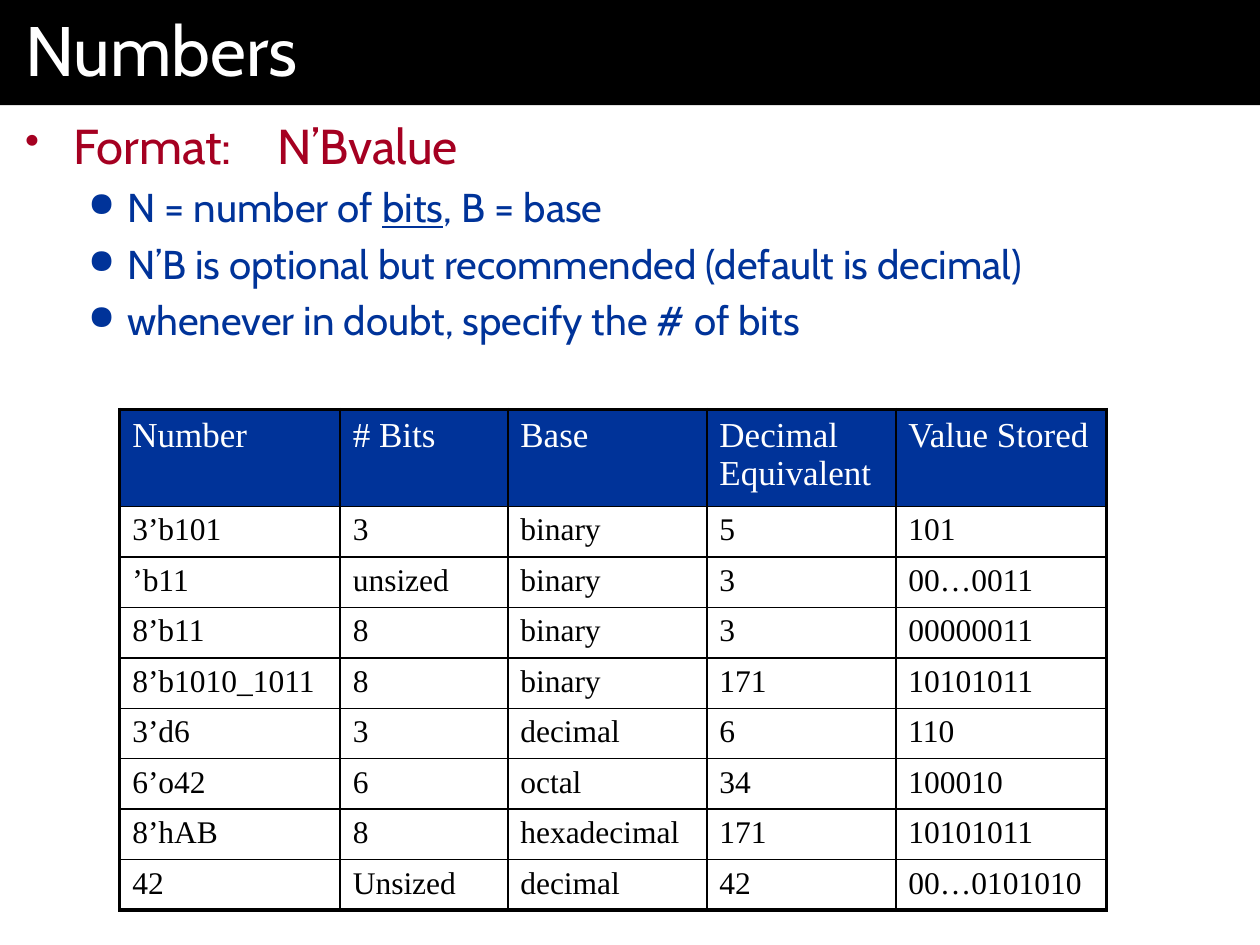
from lxml.etree import SubElement
from pptx import Presentation
from pptx.dml.color import RGBColor
from pptx.enum.text import MSO_ANCHOR, MSO_AUTO_SIZE, PP_ALIGN
from pptx.oxml import parse_xml
from pptx.oxml.ns import nsdecls, qn
from pptx.util import Inches, Pt

BLACK, WHITE, BLUE, RED = "000000", "FFFFFF", "003399", "A50021"


def color(value):
    return RGBColor.from_string(value)


def write(paragraph, text, font="Cabin", size=18, fill=BLACK, space=None,
          bullet=None, indent=(0, 0), level=0, underlined=None):
    """Fill a paragraph; space is the percentage of a line set before it."""
    paragraph.alignment = PP_ALIGN.LEFT
    paragraph.level = level
    properties = paragraph._p.get_or_add_pPr()
    if space:
        before = SubElement(properties, qn("a:spcBef"))
        SubElement(before, qn("a:spcPct"), val=str(space * 1000))
    if bullet:
        left, first = indent
        properties.set("marL", str(Inches(left)))
        properties.set("indent", str(Inches(first)))
        bullet_color = SubElement(properties, qn("a:buClr"))
        SubElement(bullet_color, qn("a:srgbClr"), val=fill)
        SubElement(properties, qn("a:buSzPct"), val="85000")
        SubElement(properties, qn("a:buChar"), char=bullet)
    # An underlined word splits the text into three runs
    before, word, after = text.partition(underlined) if underlined else (text, "", "")
    for part in filter(None, (before, word, after)):
        run = paragraph.add_run()
        run.text = part
        run.font.name = font
        run.font.size = Pt(size)
        run.font.color.rgb = color(fill)
        if part == underlined:
            run.font.underline = True


presentation = Presentation()
presentation.slide_width, presentation.slide_height = Inches(10), Inches(7.5)
slide = presentation.slides.add_slide(presentation.slide_layouts[5])
width, height = presentation.slide_width, presentation.slide_height
title_height = Inches(0.77)

# Title bar
title = slide.shapes.title
title.left, title.top, title.width, title.height = 0, 0, width, title_height
title.fill.solid()
title.fill.fore_color.rgb = color(BLACK)
frame = title.text_frame
frame.margin_left = frame.margin_right = Inches(0.2)
frame.margin_top = frame.margin_bottom = Inches(0.05)
frame.auto_size = MSO_AUTO_SIZE.SHAPE_TO_FIT_TEXT
frame.vertical_anchor = MSO_ANCHOR.TOP
write(frame.paragraphs[0], "Numbers", size=40, fill=WHITE)

# Bullet list
body = slide.shapes.add_textbox(0, title_height, width, height - title_height)
frame = body.text_frame
frame.word_wrap = True
frame.margin_left = frame.margin_right = Inches(0.2)
frame.margin_top = frame.margin_bottom = Inches(0.15)
write(frame.paragraphs[0], "Format: \tN’Bvalue", size=28, fill=RED, space=20,
      bullet="•", indent=(0.38, -0.38))
for text, underlined in (
    ("N = number of bits, B = base", "bits"),
    ("N’B is optional but recommended (default is decimal)", None),
    ("whenever in doubt, specify the # of bits", None),
):
    write(frame.add_paragraph(), text, size=23, fill=BLUE, space=20, bullet="●",
          indent=(0.81, -0.31), level=1, underlined=underlined)

# Table of number formats
rows = [
    ("Number", "# Bits", "Base", "Decimal Equivalent", "Value Stored"),
    ("3’b101", "3", "binary", "5", "101"),
    ("’b11", "unsized", "binary", "3", "00…0011"),
    ("8’b11", "8", "binary", "3", "00000011"),
    ("8’b1010_1011", "8", "binary", "171", "10101011"),
    ("3’d6", "3", "decimal", "6", "110"),
    ("6’o42", "6", "octal", "34", "100010"),
    ("8’hAB", "8", "hexadecimal", "171", "10101011"),
    ("42", "Unsized", "decimal", "42", "00…0101010"),
]
column_widths = [1.75, 1.33, 1.58, 1.5, 1.67]
row_heights = [0.77] + [0.4] * (len(rows) - 1)
table = slide.shapes.add_table(
    len(rows), len(column_widths), Inches(0.95), Inches(3.25),
    Inches(sum(column_widths)), Inches(sum(row_heights))).table
table.first_row = table.horz_banding = False
for column, column_width in zip(table.columns, column_widths):
    column.width = Inches(column_width)
for row, row_height in zip(table.rows, row_heights):
    row.height = Inches(row_height)

last_row, last_column = len(rows) - 1, len(column_widths) - 1
for row_index, values in enumerate(rows):
    is_header = row_index == 0
    for column_index, value in enumerate(values):
        cell = table.cell(row_index, column_index)
        write(cell.text_frame.paragraphs[0], value, font="Times New Roman",
              size=20 if is_header else 18, fill=WHITE if is_header else BLACK, space=20)
        # Thick outer frame, thin inner grid
        outer_sides = {"L": column_index == 0, "R": column_index == last_column,
                       "T": is_header, "B": row_index == last_row}
        cell_properties = cell._tc.get_or_add_tcPr()
        for side, is_outer in outer_sides.items():
            cell_properties.append(parse_xml(
                f'<a:ln{side} {nsdecls("a")} w="{Pt(2.25 if is_outer else 1)}">'
                f'<a:solidFill><a:srgbClr val="{BLACK}"/></a:solidFill></a:ln{side}>'))
        if is_header:
            cell.fill.solid()
            cell.fill.fore_color.rgb = color(BLUE)
        else:
            cell.fill.background()

presentation.save("out.pptx")
